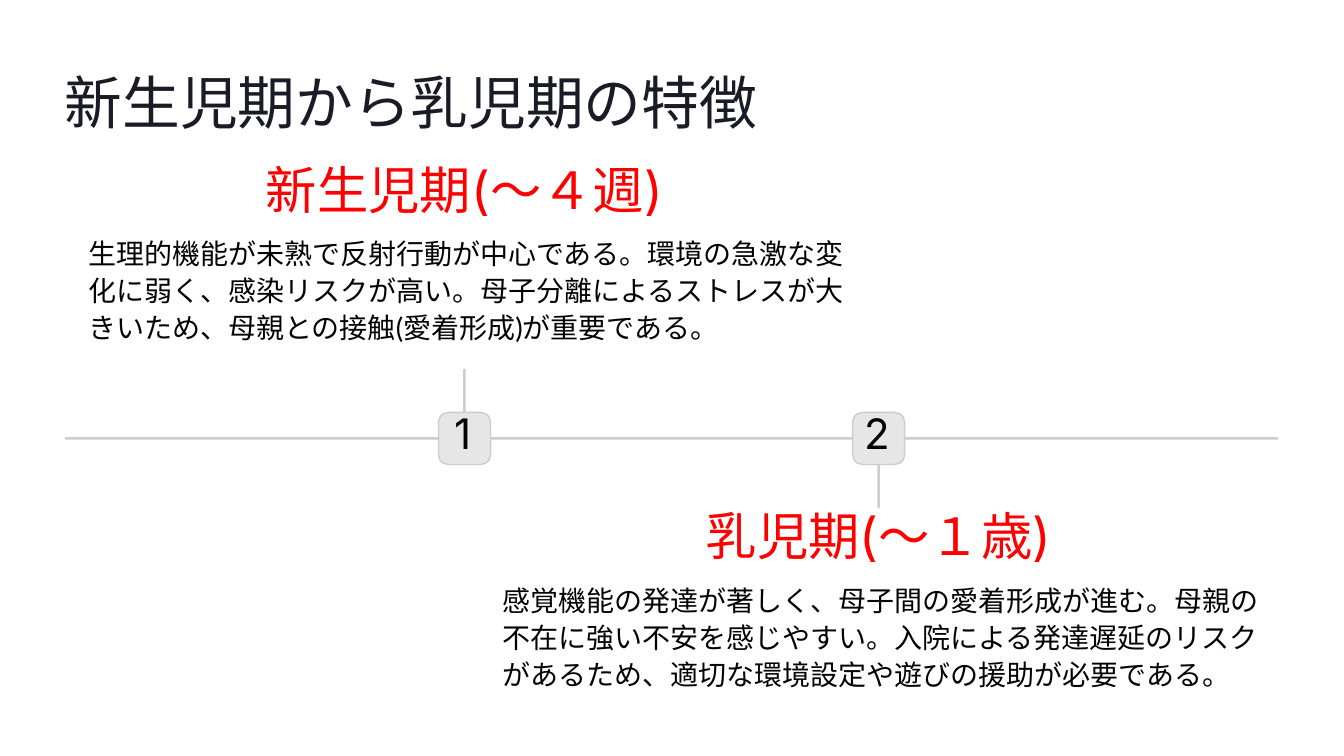
from pptx import Presentation
from pptx.dml.color import RGBColor
from pptx.enum.shapes import MSO_SHAPE
from pptx.enum.text import PP_ALIGN
from pptx.util import Inches, Pt

GREY = "CCCCCC"
INK = "030303"
BAR = 0.03
STAGES = [
    (5.53, "up", "新生児期(〜４週)",
     "生理的機能が未熟で反射行動が中心である。環境の急激な変化に弱く、感染リスクが高い。"
     "母子分離によるストレスが大きいため、母親との接触(愛着形成)が重要である。"),
    (10.46, "down", "乳児期(〜１歳)",
     "感覚機能の発達が著しく、母子間の愛着形成が進む。母親の不在に強い不安を感じやすい。"
     "入院による発達遅延のリスクがあるため、適切な環境設定や遊びの援助が必要である。"),
]


def color(code):
    """Turn a hex string into a colour."""
    return RGBColor.from_string(code)


def add_text(slide, box, text, size, font, ink, lead, align=PP_ALIGN.LEFT, wrap=False):
    """Add one paragraph without margins in the given box."""
    frame = slide.shapes.add_textbox(*map(Inches, box)).text_frame
    frame.margin_left = frame.margin_right = 0
    frame.margin_top = frame.margin_bottom = 0
    frame.word_wrap = wrap
    frame.text = text
    para = frame.paragraphs[0]
    para.alignment = align
    para.line_spacing = Pt(lead)
    style = para.runs[0].font
    style.size = Pt(size)
    style.name = font
    style.color.rgb = color(ink)


def add_block(slide, box, fill, curve, edge=None):
    """Add a rounded block, with an outline if an edge colour is given."""
    block = slide.shapes.add_shape(MSO_SHAPE.ROUNDED_RECTANGLE, *map(Inches, box))
    block.adjustments[0] = curve
    block.shadow.inherit = False
    block.fill.solid()
    block.fill.fore_color.rgb = color(fill)
    if edge:
        block.line.color.rgb = color(edge)
        block.line.width = Pt(1.2)
    else:
        block.line.fill.background()


def add_stage(slide, mid, axis, side, number, head, body):
    """Place a numbered stage above or below the axis at its centre."""
    stem, node, wide = 0.83, 0.62, 5.8
    top = axis - 3.04 if side == "up" else axis + 1.09
    start = axis - stem if side == "up" else axis
    add_block(slide, (mid - BAR / 2, start, BAR, stem), GREY, 0.5)
    add_block(slide, (mid - node / 2, axis - node / 2, node, node), "E6E6E6", 0.19, GREY)
    add_text(slide, (mid - 0.22, axis - 0.18, 0.41, 0.52), str(number),
             36, "Inter", INK, 29.5, PP_ALIGN.CENTER)
    add_text(slide, (mid - wide / 2, top, wide, 0.43), head,
             44, "Inter", "FF0000", 31, PP_ALIGN.CENTER)
    add_text(slide, (mid - 4.48, top + 0.6, 9.27, 1.33), body,
             24, "Lato", INK, 31.5, wrap=True)


def add_timeline(slide, left, axis, width):
    """Draw the axis and every stage along it."""
    add_block(slide, (left, axis - BAR / 2, width, BAR), GREY, 0.5)
    for number, (mid, side, head, body) in enumerate(STAGES, 1):
        add_stage(slide, mid, axis, side, number, head, body)


def main():
    """Build and save the slide."""
    deck = Presentation()
    deck.slide_width, deck.slide_height = Inches(16), Inches(9)
    slide = deck.slides.add_slide(deck.slide_layouts[6])
    add_text(slide, (0.77, 0.76, 8.29, 0.86), "新生児期から乳児期の特徴",
             49.5, "Inter", "1B1B27", 62)
    add_timeline(slide, 0.77, 5.22, 14.45)
    deck.save("out.pptx")


if __name__ == "__main__":
    main()
